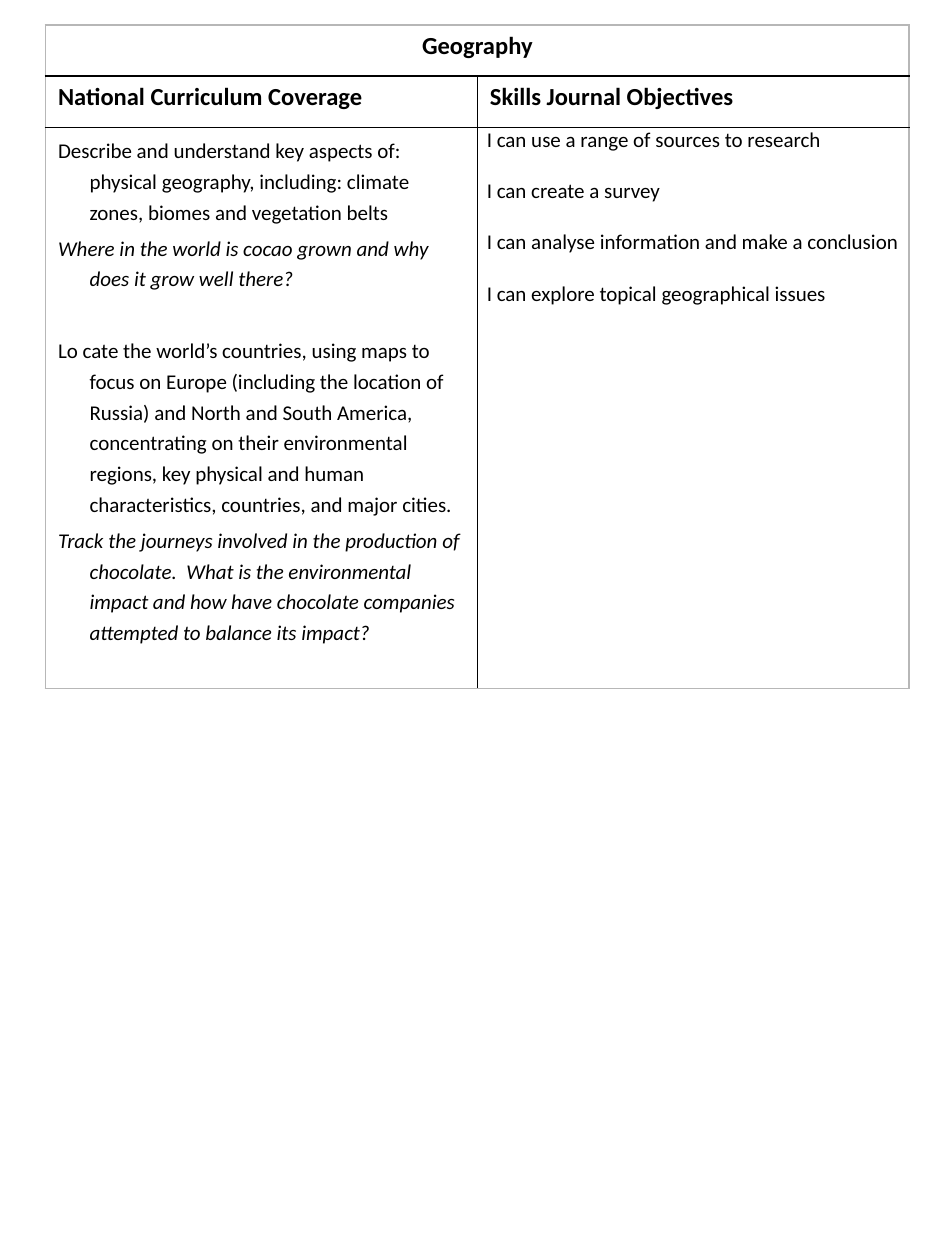
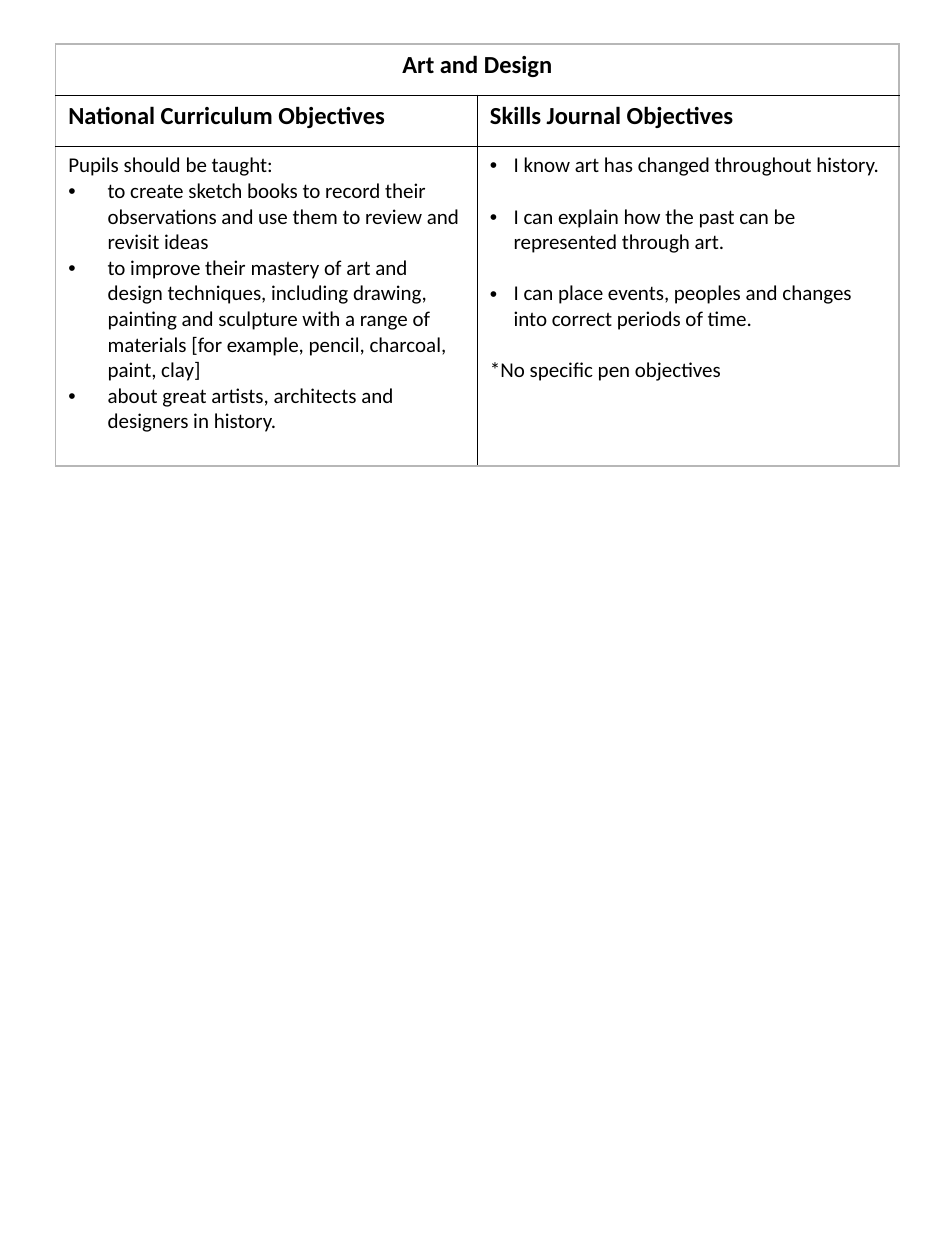
"""Build two curriculum pages, each holding one subject table."""
from lxml import etree
from pptx import Presentation
from pptx.dml.color import RGBColor
from pptx.enum.text import PP_ALIGN
from pptx.oxml.ns import qn
from pptx.util import Pt

CENTER = PP_ALIGN.CENTER
LEFT = PP_ALIGN.LEFT
COLORS = {"text": "000000", "inner": "000000", "outer": "B7B7B7", "fill": "FFFFFF"}
FONT = "Calibri"
HEAD_SIZE, BODY_SIZE = 14, 12
HEAD_HEIGHT = 29.3
BLANK_LINE = 14.65
MARGINS = (7.2, 3.6)

subjects = [
    {
        "title": "Geography",
        "place": (26, 14.2), "column": 246.8, "body_height": 320.6,
        "columns": [
            {
                "heading": "National Curriculum Coverage",
                "margins": MARGINS, "hang": 18, "spacing": 1.2,
                "lines": [
                    ("Describe and understand key aspects of: physical geography, including: "
                     "climate zones, biomes and vegetation belts", "hang", 3),
                    ("Where in the world is cocao grown and why does it grow well there?",
                     "hang italic", 23.6),
                    ("Lo cate the world’s countries, using maps to focus on Europe (including "
                     "the location of Russia) and North and South America, concentrating on "
                     "their environmental regions, key physical and human characteristics, "
                     "countries, and major cities.", "hang", 3),
                    ("Track the journeys involved in the production of chocolate.  What is the "
                     "environmental impact and how have chocolate companies attempted to "
                     "balance its impact?", "hang italic", 3),
                ],
            },
            {
                "heading": "Skills Journal Objectives",
                "margins": (5.4, 0), "hang": 0, "spacing": 1,
                "lines": [
                    ("I can use a range of sources to research", "", BLANK_LINE),
                    ("I can create a survey", "", BLANK_LINE),
                    ("I can analyse information and make a conclusion", "", BLANK_LINE),
                    ("I can explore topical geographical issues", "", 0),
                ],
            },
        ],
    },
    {
        "title": "Art and Design",
        "place": (31.8, 25.2), "column": 241, "body_height": 182.6,
        "columns": [
            {
                "heading": "National Curriculum Objectives",
                "margins": MARGINS, "hang": 22.5, "spacing": 1,
                "lines": [
                    ("Pupils should be taught:", "", 0),
                    ("to create sketch books to record their observations and use them to "
                     "review and revisit ideas", "hang bullet", 0),
                    ("to improve their mastery of art and design techniques, including drawing, "
                     "painting and sculpture with a range of materials [for example, pencil, "
                     "charcoal, paint, clay]", "hang bullet", 0),
                    ("about great artists, architects and designers in history.",
                     "hang bullet", 0),
                ],
            },
            {
                "heading": "Skills Journal Objectives",
                "margins": MARGINS, "hang": 13.5, "spacing": 1,
                "lines": [
                    ("I know art has changed throughout history.", "hang bullet", BLANK_LINE),
                    ("I can explain how the past can be represented through art.",
                     "hang bullet", BLANK_LINE),
                    ("I can place events, peoples and changes into correct periods of time.",
                     "hang bullet", BLANK_LINE),
                    ("*No specific pen objectives", "", 0),
                ],
            },
        ],
    },
]


def write(para, text, size, bold=False, italic=False, align=LEFT):
    para.text = text
    para.alignment = align
    font = para.runs[0].font
    font.name, font.size, font.bold, font.italic = FONT, Pt(size), bold, italic
    font.color.rgb = RGBColor.from_string(COLORS["text"])


def style_cell(cell, outer_sides):
    properties = cell._tc.get_or_add_tcPr()
    for side in ("L", "R", "T", "B"):
        line = etree.SubElement(properties, qn(f"a:ln{side}"), w=str(Pt(1)))
        fill = etree.SubElement(line, qn("a:solidFill"))
        color = COLORS["outer" if side in outer_sides else "inner"]
        etree.SubElement(fill, qn("a:srgbClr"), val=color)
    cell.fill.solid()
    cell.fill.fore_color.rgb = RGBColor.from_string(COLORS["fill"])


deck = Presentation()
deck.slide_width, deck.slide_height = Pt(540), Pt(720)

for subject in subjects:
    page = deck.slides.add_slide(deck.slide_layouts[6])
    left, top = subject["place"]
    heights = (HEAD_HEIGHT, HEAD_HEIGHT, subject["body_height"])
    table = page.shapes.add_table(3, 2, Pt(left), Pt(top), Pt(2 * subject["column"]),
                                  Pt(sum(heights))).table
    table.first_row = table.horz_banding = False
    for row, height in zip(table.rows, heights):
        row.height = Pt(height)
    for column in table.columns:
        column.width = Pt(subject["column"])

    for row, row_side in enumerate(("T", "", "B")):
        for column, column_side in enumerate(("L", "R")):
            sides = "LRT" if row == 0 else row_side + column_side
            style_cell(table.cell(row, column), sides)

    title = table.cell(0, 0)
    title.merge(table.cell(0, 1))
    write(title.text_frame.paragraphs[0], subject["title"], HEAD_SIZE, bold=True, align=CENTER)

    for number, content in enumerate(subject["columns"]):
        heading = table.cell(1, number).text_frame.paragraphs[0]
        write(heading, content["heading"], HEAD_SIZE, bold=True)

        body = table.cell(2, number)
        side, end = content["margins"]
        body.margin_left = body.margin_right = Pt(side)
        body.margin_top = body.margin_bottom = Pt(end)
        for index, (text, style, gap) in enumerate(content["lines"]):
            frame = body.text_frame
            para = frame.add_paragraph() if index else frame.paragraphs[0]
            write(para, text, BODY_SIZE, italic="italic" in style)
            para.line_spacing = float(content["spacing"])
            para.space_after = Pt(gap)
            properties = para._p.get_or_add_pPr()
            if "hang" in style:
                properties.set("marL", str(Pt(content["hang"])))
                properties.set("indent", str(-Pt(content["hang"])))
            if "bullet" in style:
                etree.SubElement(properties, qn("a:buFont"), typeface="Arial")
                etree.SubElement(properties, qn("a:buChar"), char="•")

deck.save("out.pptx")
